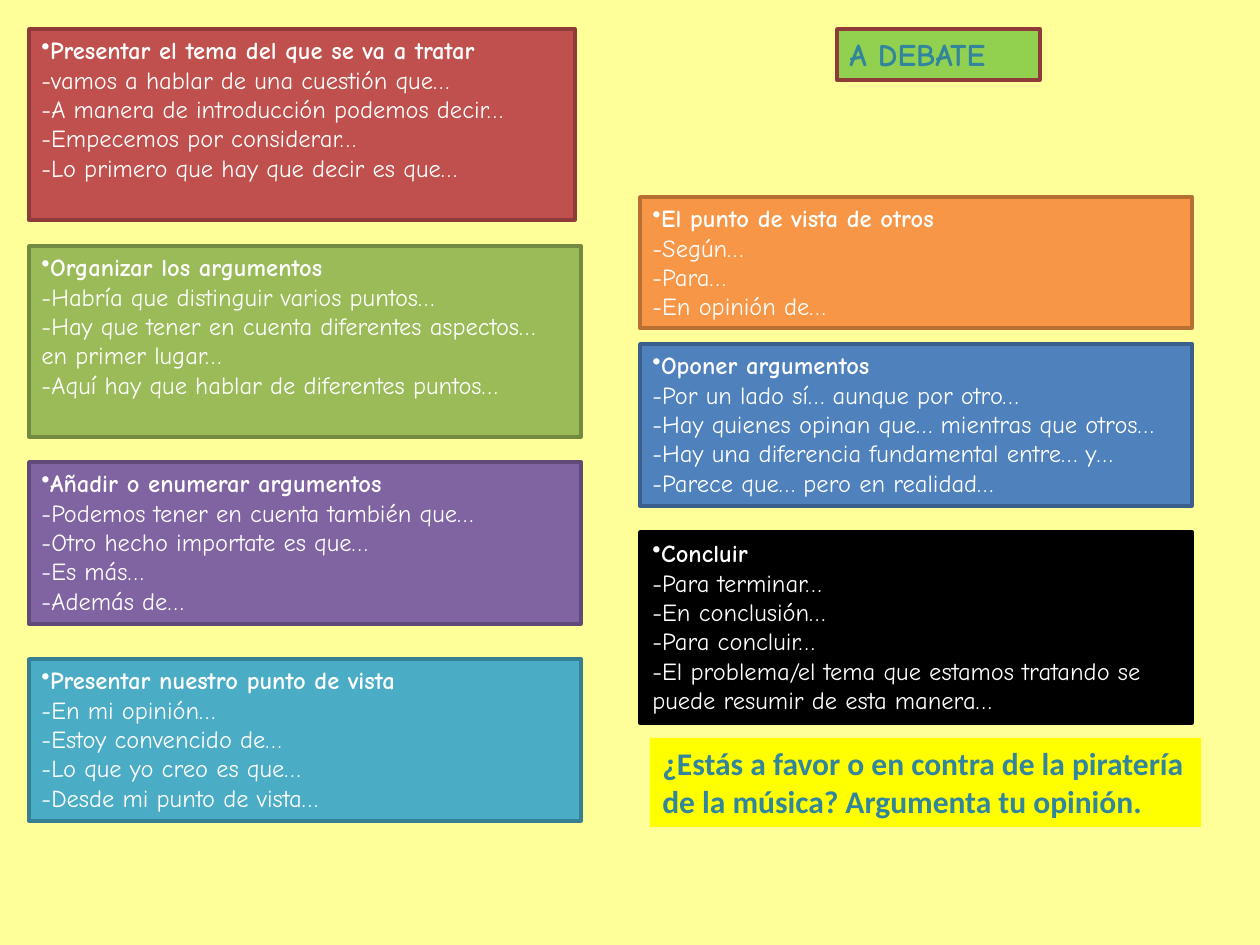
from lxml import etree
from pptx import Presentation
from pptx.dml.color import RGBColor
from pptx.enum.text import MSO_ANCHOR, MSO_AUTO_SIZE
from pptx.oxml.ns import qn
from pptx.util import Emu, Pt

TOP = MSO_ANCHOR.TOP
FIXED = MSO_AUTO_SIZE.NONE
PX = 914400 // 126

THEME = {
    "background": "FFFF99",
    "text": "FFFFFF", "accent": "31859C",
    "red": ("C0504D", "8E3B39"), "green": ("9BBB59", "738A42"),
    "purple": ("8064A2", "5F4A78"), "aqua": ("4BACC6", "377F92"),
    "orange": ("F79646", "B76F34"), "blue": ("4F81BD", "3A5F8C"),
    "black": ("000000", "000000"), "title": ("92D050", "8E3B39"),
    "question": ("FFFF00", None),
    "hand": "Comic Neue", "plain": "Calibri",
    "body_size": 14, "display_size": 18, "border": 2,
}


def add_box(left, top, width, height, colors, lines, *, font=THEME["hand"],
            size=THEME["body_size"], color=THEME["text"], all_bold=False, bullet=False):
    """Add a filled text box; the first line is bold and may carry a bullet."""
    box = slide.shapes.add_textbox(*(Emu(n * PX) for n in (left, top, width, height)))
    fill, border = colors
    box.fill.solid()
    box.fill.fore_color.rgb = RGBColor.from_string(fill)
    if border:
        box.line.color.rgb = RGBColor.from_string(border)
        box.line.width = Pt(THEME["border"])
    frame = box.text_frame
    frame.word_wrap = True
    frame.auto_size = FIXED
    frame.vertical_anchor = TOP
    for index, line in enumerate(lines):
        paragraph = frame.add_paragraph() if index else frame.paragraphs[0]
        run = paragraph.add_run()
        run.text = line
        run.font.name = font
        run.font.size = Pt(size)
        run.font.bold = all_bold or index == 0
        run.font.color.rgb = RGBColor.from_string(color)
    if bullet:
        properties = frame.paragraphs[0]._p.get_or_add_pPr()
        etree.SubElement(properties, qn("a:buChar")).set("char", "•")


presentation = Presentation()
presentation.slide_width = Emu(1260 * PX)
presentation.slide_height = Emu(945 * PX)
slide = presentation.slides.add_slide(presentation.slide_layouts[6])
slide.background.fill.solid()
slide.background.fill.fore_color.rgb = RGBColor.from_string(THEME["background"])

LEFT_COLUMN, RIGHT_COLUMN, COLUMN_WIDTH = 29, 640, 552

# Column, top, width, height, theme colours, heading followed by its phrases
debate_steps = [
    (LEFT_COLUMN, 29, 546, 191, "red", [
        "Presentar el tema del que se va a tratar",
        "-vamos a hablar de una cuestión que…",
        "-A manera de introducción podemos decir…",
        "-Empecemos por considerar…",
        "-Lo primero que hay que decir es que…"]),
    (LEFT_COLUMN, 246, COLUMN_WIDTH, 191, "green", [
        "Organizar los argumentos",
        "-Habría que distinguir varios puntos…",
        "-Hay que tener en cuenta diferentes aspectos…",
        "en primer lugar…",
        "-Aquí hay que hablar de diferentes puntos…"]),
    (LEFT_COLUMN, 462, COLUMN_WIDTH, 162, "purple", [
        "Añadir o enumerar argumentos",
        "-Podemos tener en cuenta también que…",
        "-Otro hecho importate es que…",
        "-Es más…",
        "-Además de…"]),
    (LEFT_COLUMN, 659, COLUMN_WIDTH, 162, "aqua", [
        "Presentar nuestro punto de vista",
        "-En mi opinión…",
        "-Estoy convencido de…",
        "-Lo que yo creo es que…",
        "-Desde mi punto de vista…"]),
    (RIGHT_COLUMN, 197, COLUMN_WIDTH, 131, "orange", [
        "El punto de vista de otros",
        "-Según…",
        "-Para…",
        "-En opinión de…"]),
    (RIGHT_COLUMN, 344, COLUMN_WIDTH, 162, "blue", [
        "Oponer argumentos",
        "-Por un lado sí… aunque por otro…",
        "-Hay quienes opinan que… mientras que otros…",
        "-Hay una diferencia fundamental entre… y…",
        "-Parece que… pero en realidad…"]),
    (RIGHT_COLUMN, 532, COLUMN_WIDTH, 191, "black", [
        "Concluir",
        "-Para terminar…",
        "-En conclusión…",
        "-Para concluir…",
        "-El problema/el tema que estamos tratando se puede resumir de esta manera…"]),
]
for left, top, width, height, color_name, phrases in debate_steps:
    add_box(left, top, width, height, THEME[color_name], phrases, bullet=True)

add_box(650, 738, 551, 89, THEME["question"],
        ["¿Estás a favor o en contra de la piratería", "de la música? Argumenta tu opinión."],
        font=THEME["plain"], size=THEME["display_size"], color=THEME["accent"], all_bold=True)
add_box(837, 29, 203, 51, THEME["title"], ["A DEBATE"],
        size=THEME["display_size"], color=THEME["accent"])

presentation.save("out.pptx")
